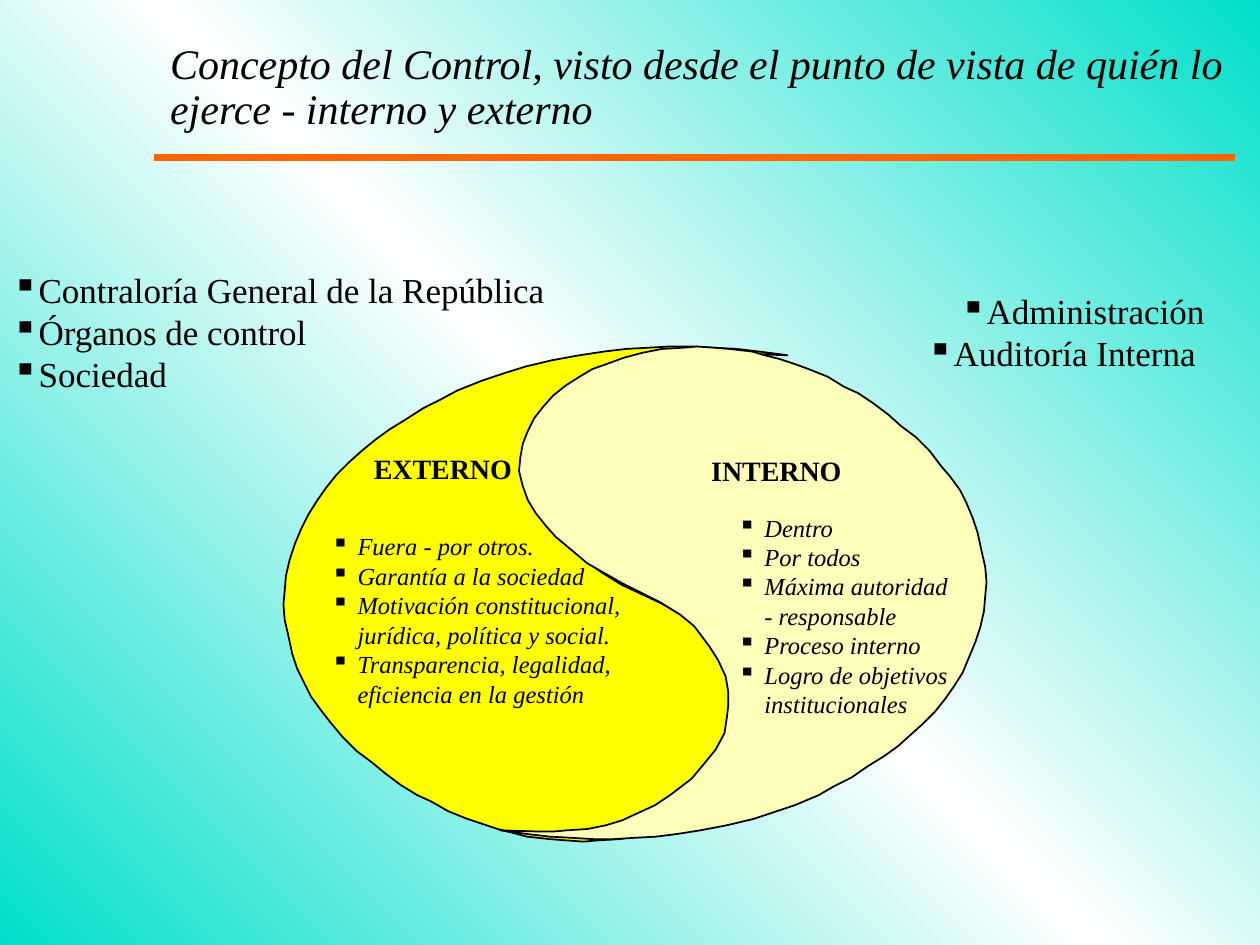
import copy
from dataclasses import dataclass

import pptx
import pptx.dml.color
import pptx.enum.shapes
import pptx.enum.text
import pptx.oxml
import pptx.oxml.ns
import pptx.util

Pt = pptx.util.Pt
RGB = pptx.dml.color.RGBColor.from_string
Align = pptx.enum.text.PP_ALIGN
Anchor = pptx.enum.text.MSO_ANCHOR
qn = pptx.oxml.ns.qn


@dataclass(frozen=True)
class Theme:
    font: str = "Times New Roman"
    ink: str = "000000"
    teal: str = "00DFCA"
    white: str = "FFFFFF"
    external: str = "FFFF00"
    internal: str = "FCFEB9"
    rule: str = "FF6600"
    title_size: int = 24
    group_size: int = 20
    heading_size: int = 16
    detail_size: int = 14


theme = Theme()


def write_text(shape, lines, size, bold=False, italic=False, align=Align.LEFT,
               anchor=Anchor.TOP, line_spacing=None, bullet_indent=None):
    """Fill a shape with one paragraph per line; a vertical tab breaks a line."""
    frame = shape.text_frame
    frame.word_wrap = True
    frame.vertical_anchor = anchor
    frame.margin_left = frame.margin_right = Pt(7.2)
    frame.margin_top = frame.margin_bottom = Pt(3.6)
    for index, line in enumerate(lines):
        paragraph = frame.paragraphs[0] if index == 0 else frame.add_paragraph()
        paragraph.text = line
        paragraph.alignment = align
        if line_spacing:
            paragraph.line_spacing = line_spacing
        for run in paragraph.runs:
            run.font.name = theme.font
            run.font.size = Pt(size)
            run.font.bold = bold
            run.font.italic = italic
            run.font.color.rgb = RGB(theme.ink)
        for line_break in paragraph._p.findall(qn("a:br")):
            line_break.append(copy.deepcopy(paragraph.runs[0]._r.rPr))
        if bullet_indent:
            properties = paragraph._p.get_or_add_pPr()
            properties.set("marL", str(Pt(bullet_indent)))
            properties.set("indent", str(-Pt(bullet_indent)))
            color = pptx.oxml.parse_xml(
                f'<a:buClr {pptx.oxml.ns.nsdecls("a")}><a:srgbClr val="{theme.ink}"/></a:buClr>')
            properties.append(color)
            properties.append(pptx.oxml.parse_xml(
                f'<a:buChar {pptx.oxml.ns.nsdecls("a")} char="▪"/>'))


presentation = pptx.Presentation()
presentation.slide_width = Pt(720)
presentation.slide_height = Pt(540)
slide = presentation.slides.add_slide(presentation.slide_layouts[5])

# Diagonal background: teal, white, teal
background = slide.background.fill
background.gradient()
background.gradient_angle = 45
stops = background.gradient_stops
for stop, position, color in zip(stops, (0, 0.5), (theme.teal, theme.white)):
    stop.position = position
    stop.color.rgb = RGB(color)
stop_list = next(slide._element.iter(qn("a:gsLst")))
last_stop = copy.deepcopy(stop_list[0])
last_stop.set("pos", "100000")
stop_list.append(last_stop)

title = slide.shapes.title
title.left, title.top, title.width, title.height = Pt(90), Pt(18), Pt(630), Pt(64.8)
write_text(title, ["Concepto del Control, visto desde el punto de vista de quién lo "
                   "ejerce - interno y externo"],
           theme.title_size, italic=True, anchor=Anchor.MIDDLE, line_spacing=0.9)

# Outline of the external half, in hundredths of an inch
external_outline = [
    (553, 495), (539, 487), (525, 479), (493, 464), (477, 454), (465, 445), (453, 429),
    (446, 418), (439, 405), (437, 393), (437, 382), (438, 372), (441, 359), (448, 346),
    (457, 335), (468, 323), (485, 310), (498, 302), (511, 296), (524, 290), (538, 286),
    (553, 283), (570, 282), (581, 281), (593, 281), (625, 282), (602, 279), (585, 277),
    (566, 276), (548, 275), (532, 275), (515, 276), (497, 277), (480, 279), (460, 282),
    (438, 286), (417, 291), (401, 296), (383, 302), (363, 310), (350, 317), (336, 324),
    (322, 333), (309, 341), (298, 349), (287, 358), (277, 367), (267, 377), (259, 387),
    (252, 397), (245, 408), (239, 420), (234, 432), (230, 444), (227, 457), (226, 469),
    (225, 480), (226, 492), (229, 505), (232, 519), (236, 531), (242, 543), (247, 553),
    (255, 564), (262, 573), (272, 585), (283, 596), (295, 605), (306, 614), (318, 623),
    (331, 631), (342, 636), (356, 644), (371, 650), (383, 654), (395, 658), (407, 661),
    (418, 664), (436, 666), (449, 667), (463, 668), (475, 667), (492, 666), (508, 663),
    (523, 659), (535, 655), (549, 650), (560, 644), (571, 637), (581, 629), (590, 620),
    (597, 611), (602, 601), (606, 591), (608, 580), (609, 568), (606, 556), (602, 545),
    (596, 535), (588, 525), (579, 516), (567, 506),
]
# The internal half is the same outline turned by 180 degrees and slightly reduced
internal_outline = [(783 - (x - 225) * 386 / 400, 666 - (y - 275) * 391 / 393)
                    for x, y in external_outline]

for outline, color in ((external_outline, theme.external), (internal_outline, theme.internal)):
    builder = slide.shapes.build_freeform(*outline[0], scale=Pt(0.72))
    builder.add_line_segments(outline[1:], close=True)
    half = builder.convert_to_shape()
    half.shadow.inherit = False
    half.fill.solid()
    half.fill.fore_color.rgb = RGB(color)
    half.line.color.rgb = RGB(theme.ink)
    half.line.width = Pt(1)

heading = dict(size=theme.heading_size, bold=True, align=Align.CENTER, anchor=Anchor.MIDDLE)
group = dict(size=theme.group_size, bullet_indent=14.4)
detail = dict(size=theme.detail_size, italic=True, bullet_indent=15)
text_boxes = [
    ((197.3, 254.9, 111.6, 25.9), ["EXTERNO"], heading),
    ((360, 255.6, 163.4, 25.9), [" INTERNO"], heading),
    ((522, 162, 173.5, 55.4), ["Administración", "Auditoría Interna "],
     dict(group, align=Align.RIGHT)),
    ((0, 149.8, 365.8, 79.2),
     ["Contraloría General de la República", "Órganos de control", "Sociedad"], group),
    ((182.2, 300.2, 193, 108),
     ["Fuera - por otros.", "Garantía a la sociedad",
      "Motivación constitucional, jurídica, política y social.",
      "Transparencia, legalidad, eficiencia en la gestión"], detail),
    ((414.7, 289.4, 173.5, 124.6),
     ["Dentro", "Por todos", "Máxima autoridad\v- responsable", "Proceso interno",
      "Logro de objetivos institucionales"], detail),
]
for bounds, lines, text_format in text_boxes:
    text_box = slide.shapes.add_textbox(*map(Pt, bounds))
    write_text(text_box, lines, **text_format)
    text_box.text_frame.auto_size = pptx.enum.text.MSO_AUTO_SIZE.SHAPE_TO_FIT_TEXT

title_rule = slide.shapes.add_connector(
    pptx.enum.shapes.MSO_CONNECTOR.STRAIGHT, Pt(88), Pt(90), Pt(705.6), Pt(90))
title_rule.line.color.rgb = RGB(theme.rule)
title_rule.line.width = Pt(4.5)
title_rule._element.spPr.append(
    pptx.oxml.parse_xml(f'<a:effectLst {pptx.oxml.ns.nsdecls("a")}/>'))

presentation.save("out.pptx")
